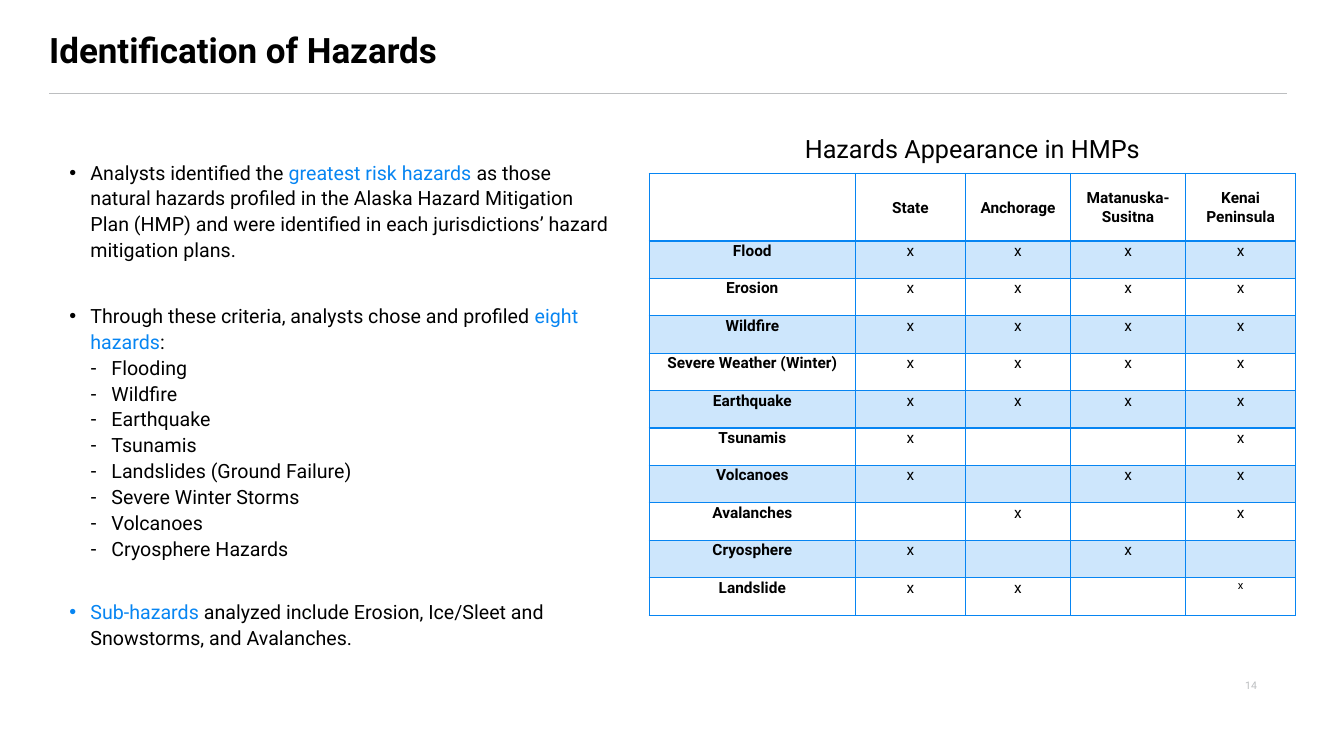
"""Build the slide on identification of hazards."""
import pptx
import pptx.dml.color
import pptx.enum.shapes
import pptx.enum.text
import pptx.oxml
import pptx.oxml.ns
import pptx.util
from lxml import etree

Cm = pptx.util.Cm
Pt = pptx.util.Pt
RGB = pptx.dml.color.RGBColor
ALIGN = pptx.enum.text.PP_ALIGN
ANCHOR = pptx.enum.text.MSO_ANCHOR
qn = pptx.oxml.ns.qn

BLACK = RGB(0x00, 0x00, 0x00)
BLUE = RGB(0x07, 0x85, 0xF2)
GREY = RGB(0xBC, 0xBE, 0xC0)
FACE = "Roboto"

TITLE = "Identification of Hazards"
HEADING = "Hazards Appearance in HMPs"
PAGE = "14"
HAZARDS = [
    "Flooding", "Wildfire", "Earthquake", "Tsunamis",
    "Landslides (Ground Failure)", "Severe Winter Storms",
    "Volcanoes", "Cryosphere Hazards",
]
POINTS = [
    ("•", 0, [
        ("Analysts identified the ", BLACK),
        ("greatest risk hazards ", BLUE),
        ("as those natural hazards profiled in the Alaska Hazard Mitigation "
         "Plan (HMP) and were identified in each jurisdictions’ hazard "
         "mitigation plans.", BLACK),
    ]),
    ("•", 28.5, [
        ("Through these criteria, analysts chose and profiled ", BLACK),
        ("eight hazards", BLUE),
        (":", BLACK),
    ]),
    *[("-", 0, [(name, BLACK)]) for name in HAZARDS],
    ("•", 26.7, [
        ("Sub-hazards", BLUE),
        (" analyzed include Erosion, Ice/Sleet and Snowstorms, "
         "and Avalanches.", BLACK),
    ]),
]
PLACES = ["", "State", "Anchorage", "Matanuska-Susitna", "Kenai Peninsula"]
MARKS = [
    ("Flood", "x", "x", "x", "x"),
    ("Erosion", "x", "x", "x", "x"),
    ("Wildfire", "x", "x", "x", "x"),
    ("Severe Weather (Winter)", "x", "x", "x", "x"),
    ("Earthquake", "x", "x", "x", "x"),
    ("Tsunamis", "x", "", "", "x"),
    ("Volcanoes", "x", "", "x", "x"),
    ("Avalanches", "", "x", "", "x"),
    ("Cryosphere", "x", "", "x", ""),
    ("Landslide", "x", "x", "", "x"),
]
WIDTHS = [5.2, 2.77, 2.65, 2.9, 2.77]
LEFT, TOP, TALL, HEAD = 16.36, 4.37, 11.13, 1.7
STEP = Cm((TALL - HEAD) / len(MARKS))
INDENT = 0.53


def style(para, size, color=BLACK, bold=False, align=ALIGN.LEFT):
    para.alignment = align
    font = para.font
    font.name, font.size, font.bold = FACE, Pt(size), bold
    font.color.rgb = color


def add_box(slide, left, top, width, height, side=0.25, anchor=ANCHOR.TOP):
    frame = slide.shapes.add_textbox(
        Cm(left), Cm(top), Cm(width), Cm(height)).text_frame
    frame.word_wrap = True
    frame.vertical_anchor = anchor
    frame.margin_left = frame.margin_right = Cm(side)
    return frame


def add_points(frame):
    for num, (mark, gap, parts) in enumerate(POINTS):
        para = frame.add_paragraph() if num else frame.paragraphs[0]
        level = 2 if mark == "-" else 1
        para.line_spacing = 1.1
        para.space_before = Pt(gap)
        props = para._p.get_or_add_pPr()
        props.set("marL", str(Cm(INDENT * level)))
        props.set("indent", str(-Cm(INDENT)))
        etree.SubElement(props, qn("a:buFont"), typeface="Arial")
        etree.SubElement(props, qn("a:buChar"), char=mark)
        style(para, 14)
        for text, color in parts:
            run = para.add_run()
            run.text = text
            run.font.color.rgb = color


def add_edges(cell, row):
    props = cell._tc.get_or_add_tcPr()
    for num, side in enumerate(("lnL", "lnR", "lnT", "lnB")):
        thick = (row, side) in ((0, "lnB"), (1, "lnT"))
        line = etree.Element(qn("a:" + side), w=str(Pt(2 if thick else 1)))
        fill = etree.SubElement(line, qn("a:solidFill"))
        etree.SubElement(fill, qn("a:srgbClr"), val=str(BLUE))
        props.insert(num, line)


def fill_cell(cell, text, row, col):
    last = row == len(MARKS) and col == len(WIDTHS) - 1
    cell.margin_left = cell.margin_right = Cm(0.18)
    cell.margin_top = cell.margin_bottom = 0
    cell.vertical_anchor = ANCHOR.TOP if row else ANCHOR.MIDDLE
    if row % 2:
        cell.fill.solid()
        cell.fill.fore_color.rgb = BLUE
        tint = cell._tc.tcPr.find(".//" + qn("a:srgbClr"))
        etree.SubElement(tint, qn("a:alpha"), val="20000")
    else:
        cell.fill.background()
    add_edges(cell, row)
    cell.text = text
    para = cell.text_frame.paragraphs[0]
    para.line_spacing = 1.07
    style(para, 8 if last else 11, bold=row == 0 or col == 0,
          align=ALIGN.CENTER)


def add_grid(slide):
    rows = [PLACES, *MARKS]
    grid = slide.shapes.add_table(
        len(rows), len(WIDTHS), Cm(LEFT), Cm(TOP),
        Cm(sum(WIDTHS)), Cm(TALL)).table
    grid.first_row = grid.horz_banding = False
    for col, width in enumerate(WIDTHS):
        grid.columns[col].width = Cm(width)
    for row, texts in enumerate(rows):
        grid.rows[row].height = STEP if row else Cm(HEAD)
        for col, text in enumerate(texts):
            fill_cell(grid.cell(row, col), text, row, col)


def add_rule(slide):
    rule = slide.shapes.add_connector(
        pptx.enum.shapes.MSO_CONNECTOR.STRAIGHT,
        Cm(1.24), Cm(2.35), Cm(32.44), Cm(2.35))
    rule.line.color.rgb = GREY
    rule.line.width = Pt(0.5)
    etree.SubElement(rule._element.spPr, qn("a:effectLst"))


def main():
    deck = pptx.Presentation()
    deck.slide_width, deck.slide_height = Cm(33.87), Cm(19.05)
    slide = deck.slides.add_slide(deck.slide_layouts[6])
    add_rule(slide)

    title = add_box(slide, 1.24, 0.25, 27.56, 2.11, 0, ANCHOR.MIDDLE)
    title.text = TITLE
    title.paragraphs[0].line_spacing = 0.9
    style(title.paragraphs[0], 25, bold=True)

    page = add_box(slide, 25.22, 16.76, 6.71, 1.02, anchor=ANCHOR.MIDDLE)
    page.text = PAGE
    style(page.paragraphs[0], 7.5, GREY, align=ALIGN.RIGHT)

    add_points(add_box(slide, 1.75, 3.86, 13.77, 12.95, 0))
    add_grid(slide)

    heading = add_box(slide, LEFT, 3.23, sum(WIDTHS), 1.02)
    heading.text = HEADING
    style(heading.paragraphs[0], 18, align=ALIGN.CENTER)
    deck.save("out.pptx")


if __name__ == "__main__":
    main()
